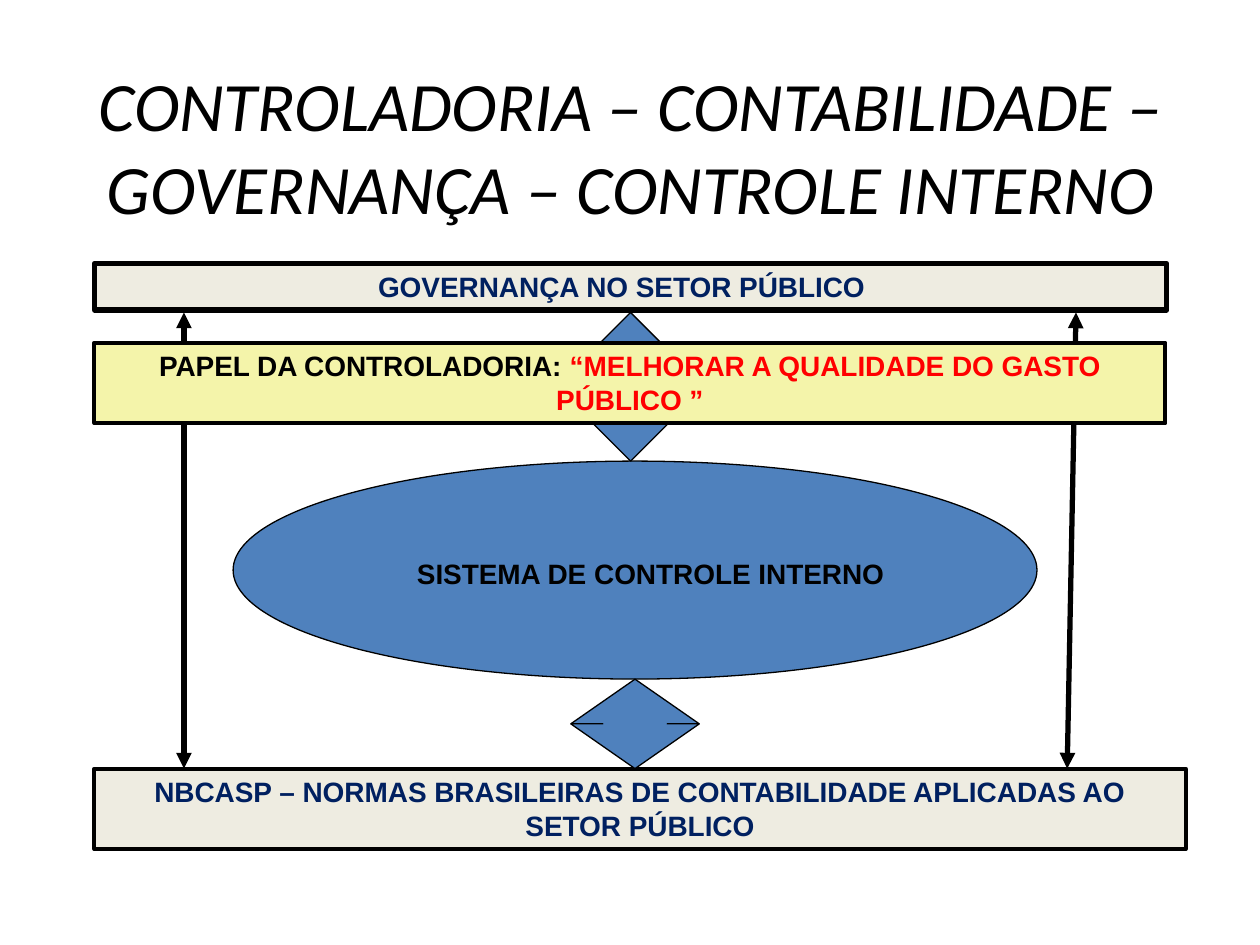
from dataclasses import dataclass

from lxml.etree import SubElement
from pptx import Presentation
from pptx.dml.color import RGBColor
from pptx.enum.shapes import MSO_CONNECTOR, MSO_SHAPE
from pptx.enum.text import MSO_ANCHOR, MSO_AUTO_SIZE, PP_ALIGN
from pptx.oxml.ns import qn
from pptx.slide import Slide
from pptx.util import Inches, Pt

BLACK = RGBColor(0x00, 0x00, 0x00)
NAVY = RGBColor(0x00, 0x20, 0x60)
RED = RGBColor(0xFF, 0x00, 0x00)
BLUE = RGBColor(0x4F, 0x81, 0xBD)
CREAM = RGBColor(0xEE, 0xEC, 0xE1)
YELLOW = RGBColor(0xF4, 0xF4, 0xAA)

WIDTH, HEIGHT = Inches(10), Inches(7.5)
COLUMNS, ROWS = 100, 75


def col(n):
    return round(WIDTH * n / COLUMNS)


def row(n):
    return round(HEIGHT * n / ROWS)


def write(frame, *parts, anchor=MSO_ANCHOR.TOP, font="Arial", size=16,
          bold=True, italic=False, right_inset=0.1):
    """Fill a text frame with one centred paragraph of (text, colour) parts."""
    frame.word_wrap = True
    frame.auto_size = MSO_AUTO_SIZE.NONE
    frame.vertical_anchor = anchor
    frame.margin_right = Inches(right_inset)
    paragraph = frame.paragraphs[0]
    paragraph.alignment = PP_ALIGN.CENTER
    for text, colour in parts:
        run = paragraph.add_run()
        run.text = text
        run.font.name, run.font.size = font, Pt(size)
        run.font.bold, run.font.italic = bold, italic
        run.font.color.rgb = colour


@dataclass
class Diagram:
    slide: Slide
    line_colour: RGBColor = BLACK
    thin: float = 0.75
    thick: float = 3

    def title(self, text, left, top, width, height):
        title = self.slide.shapes.title
        title.left, title.top = col(left), row(top)
        title.width, title.height = col(width), row(height)
        write(title.text_frame, (text, BLACK), anchor=MSO_ANCHOR.MIDDLE,
              font="Calibri", size=39.6, bold=False, italic=True)

    def shape(self, kind, left, top, width, height, fill=BLUE, line=None):
        shape = self.slide.shapes.add_shape(
            kind, col(left), row(top), col(width), row(height))
        shape.shadow.inherit = False
        shape.fill.solid()
        shape.fill.fore_color.rgb = fill
        shape.line.color.rgb = self.line_colour
        shape.line.width = Pt(line or self.thin)
        return shape

    def band(self, *parts, top, width, height, fill, line=2.25, **style):
        band = self.shape(MSO_SHAPE.RECTANGLE, BAND_LEFT, top, width, height,
                          fill, line)
        write(band.text_frame, *parts, **style)

    def label(self, text, left, top, width, height):
        label = self.slide.shapes.add_textbox(
            col(left), row(top), col(width), row(height))
        write(label.text_frame, (text, BLACK))

    def block_arrow(self, left, top, width, bottom, head, shaft=0.5):
        arrow = self.shape(MSO_SHAPE.UP_DOWN_ARROW, left, top, width,
                           bottom - top)
        # For this preset the head length comes before the shaft width
        arrow.adjustments[0], arrow.adjustments[1] = head, shaft

    def double_arrow(self, x_top, x_bottom, top, bottom):
        arrow = self.slide.shapes.add_connector(
            MSO_CONNECTOR.STRAIGHT, col(x_top), row(top), col(x_bottom),
            row(bottom))
        arrow.line.color.rgb = self.line_colour
        arrow.line.width = Pt(self.thick)
        outline = arrow.line._get_or_add_ln()
        for end in ("a:headEnd", "a:tailEnd"):
            SubElement(outline, qn(end), type="triangle")
        SubElement(arrow._element.spPr, qn("a:effectLst"))


# Shared levels of the diagram, in grid rows and columns
BAND_LEFT = 7.5
GOVERNANCE_TOP, GOVERNANCE_FOOT = 20.9, 24.8
SYSTEM_TOP, SYSTEM_HEIGHT = 36.6, 17.3
SYSTEM_FOOT = SYSTEM_TOP + SYSTEM_HEIGHT
STANDARDS_TOP = 61

presentation = Presentation()
presentation.slide_width, presentation.slide_height = WIDTH, HEIGHT
diagram = Diagram(presentation.slides.add_slide(presentation.slide_layouts[5]))

diagram.title("CONTROLADORIA – CONTABILIDADE – GOVERNANÇA – CONTROLE INTERNO",
              2, 9.2, 96.1, 4.6)

# Accounting standards at the base
diagram.band(("NBCASP – NORMAS BRASILEIRAS DE CONTABILIDADE APLICADAS AO "
              "SETOR PÚBLICO", NAVY),
             top=STANDARDS_TOP, width=86.6, height=6.4, fill=CREAM)

# Internal control system in the centre
diagram.shape(MSO_SHAPE.OVAL, 18.5, SYSTEM_TOP, 63.8, SYSTEM_HEIGHT)
diagram.label("SISTEMA DE CONTROLE INTERNO", 28, 43.7, 47.3, 3.7)

# Governance at the top
diagram.band(("GOVERNANÇA NO SETOR PÚBLICO", NAVY), top=GOVERNANCE_TOP,
             width=85.1, height=3.7, fill=CREAM, line=3, right_inset=0.24)

# Links between the levels
diagram.block_arrow(45.3, GOVERNANCE_FOOT, 9.5, SYSTEM_TOP, head=0.25)
diagram.block_arrow(45.3, SYSTEM_FOOT, 10.2, STANDARDS_TOP, head=0.2)
for x_top, x_bottom in ((14.6, 14.6), (85.4, 84.7)):
    diagram.double_arrow(x_top, x_bottom, GOVERNANCE_FOOT, STANDARDS_TOP)

# Role of the controller's office, over the links
diagram.band(("PAPEL DA CONTROLADORIA: ", BLACK),
             ("“MELHORAR A QUALIDADE DO GASTO PÚBLICO ”", RED),
             top=27.2, width=85, height=6.4, fill=YELLOW)

presentation.save("out.pptx")
